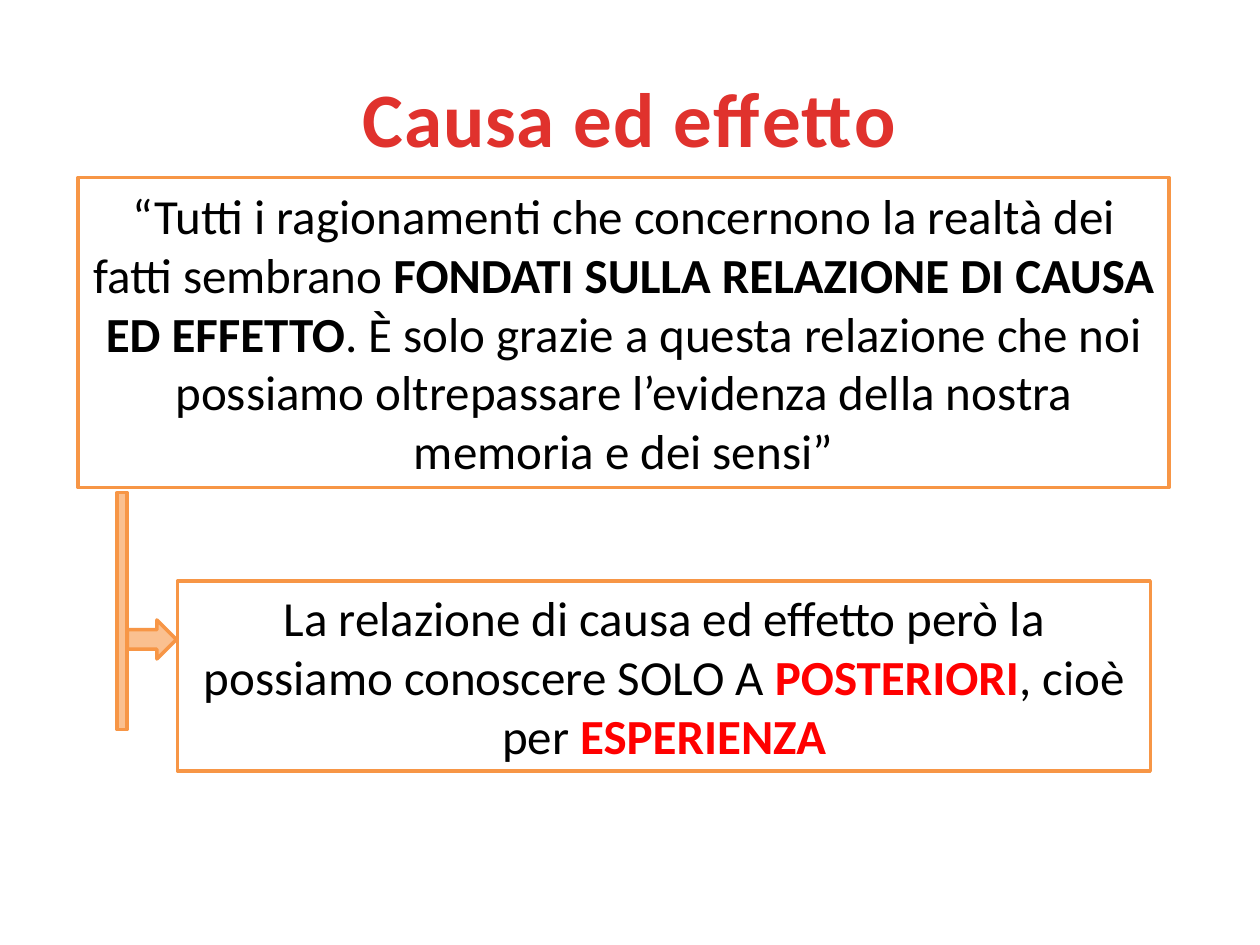
from pptx import Presentation
from pptx.dml.color import RGBColor
from pptx.enum.shapes import MSO_SHAPE
from pptx.enum.text import MSO_ANCHOR, PP_ALIGN
from pptx.util import Inches, Pt

WHITE = RGBColor(0xFF, 0xFF, 0xFF)
BLACK = RGBColor(0x00, 0x00, 0x00)
RED = RGBColor(0xFF, 0x00, 0x00)
TITLE_RED = RGBColor(0xE0, 0x32, 0x2D)
ORANGE = RGBColor(0xF7, 0x96, 0x46)
PEACH = RGBColor(0xFA, 0xC0, 0x90)
FONT = "Calibri"

TITLE = "Causa ed effetto"
QUOTE = [
    ("“Tutti i ragionamenti che concernono la realtà dei fatti sembrano ", BLACK, False),
    ("FONDATI SULLA RELAZIONE DI CAUSA ED EFFETTO", BLACK, True),
    (". È solo grazie a questa relazione che noi possiamo oltrepassare "
     "l’evidenza della nostra memoria e dei sensi”", BLACK, False),
]
CONCLUSION = [
    ("La relazione di causa ed effetto però la possiamo conoscere SOLO A ", BLACK, False),
    ("POSTERIORI", RED, True),
    (", cioè per ", BLACK, False),
    ("ESPERIENZA", RED, True),
]
SHAPES = [
    (MSO_SHAPE.RECTANGLE, (0.62, 1.41, 8.66, 2.46), WHITE, QUOTE),
    (MSO_SHAPE.RECTANGLE, (0.93, 3.91, 0.08, 1.88), PEACH, []),
    (MSO_SHAPE.RIGHT_ARROW, (1.01, 4.92, 0.39, 0.31), PEACH, []),
    (MSO_SHAPE.RECTANGLE, (1.41, 4.61, 7.72, 1.51), WHITE, CONCLUSION),
]


def write_span(para, text, size, color, bold):
    span = para.add_run()
    span.text = text
    span.font.name = FONT
    span.font.size = Pt(size)
    span.font.bold = bold
    span.font.color.rgb = color
    return span


def add_title(page):
    title = page.shapes.title
    title.left, title.top, title.width, title.height = map(Inches, (0.5, 0.3, 9, 1.25))
    title.text_frame.vertical_anchor = MSO_ANCHOR.MIDDLE
    para = title.text_frame.paragraphs[0]
    para.alignment = PP_ALIGN.CENTER
    span = write_span(para, TITLE, 44, TITLE_RED, True)
    span._r.get_or_add_rPr().set("spc", "50")


def add_box(page, kind, place, fill, spans):
    box = page.shapes.add_shape(kind, *map(Inches, place))
    box.shadow.inherit = False
    box.fill.solid()
    box.fill.fore_color.rgb = fill
    box.line.color.rgb = ORANGE
    box.line.width = Pt(2)
    box.text_frame.word_wrap = True
    para = box.text_frame.paragraphs[0]
    para.alignment = PP_ALIGN.CENTER
    for text, color, bold in spans:
        write_span(para, text, 28, color, bold)


def main():
    """Build the slide on cause and effect."""
    deck = Presentation()
    deck.slide_width, deck.slide_height = Inches(10), Inches(7.5)
    page = deck.slides.add_slide(deck.slide_layouts[5])
    add_title(page)
    for shape in SHAPES:
        add_box(page, *shape)
    deck.save("out.pptx")


if __name__ == "__main__":
    main()
